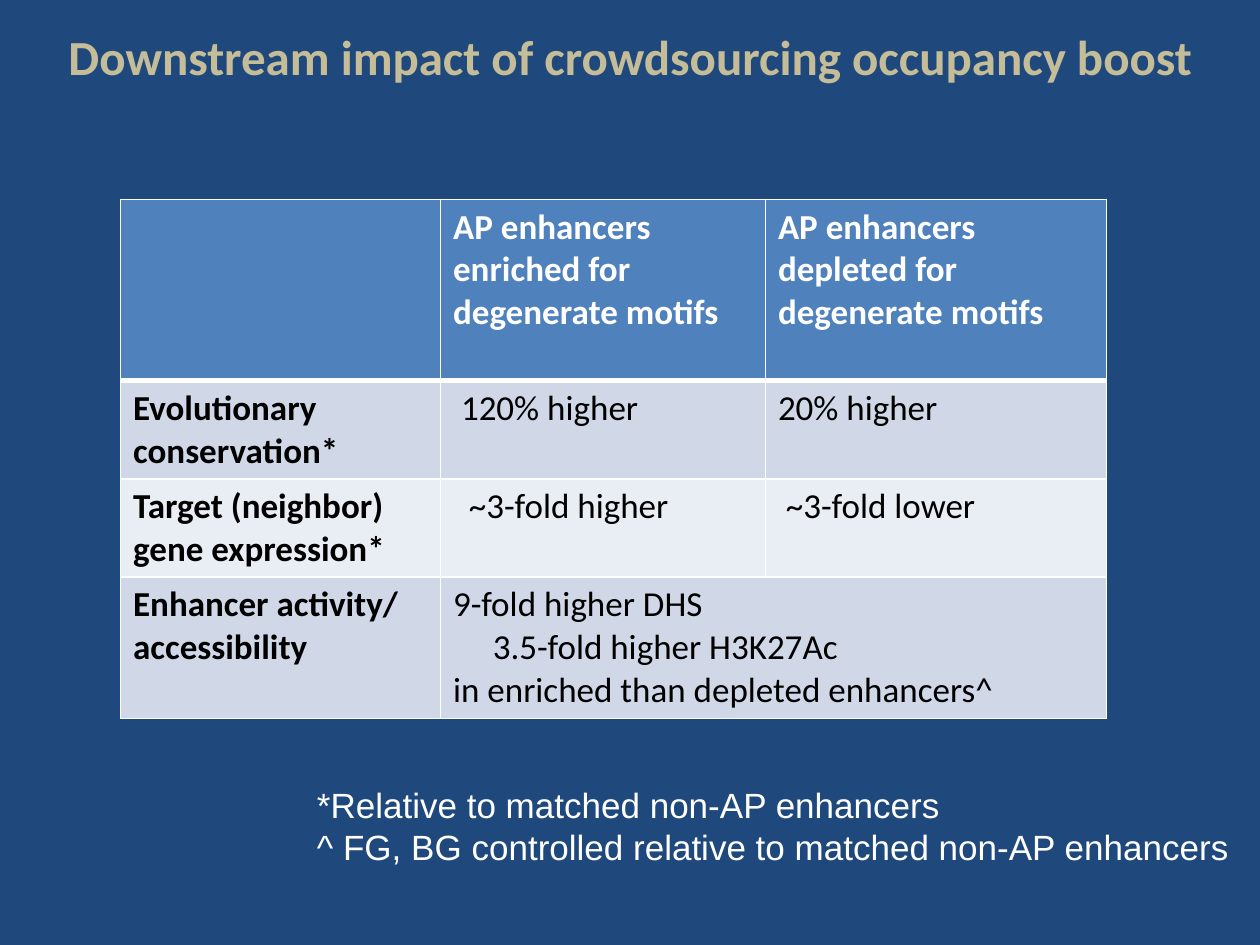
from dataclasses import dataclass

from lxml.etree import SubElement
from pptx import Presentation
from pptx.dml.color import RGBColor
from pptx.enum.text import MSO_ANCHOR, MSO_AUTO_SIZE, PP_ALIGN
from pptx.oxml.ns import qn
from pptx.util import Cm, Pt


@dataclass(frozen=True)
class Theme:
    background: str = "1F497D"
    title: str = "C4BD97"
    light: str = "FFFFFF"
    dark: str = "000000"
    header: str = "4F81BD"
    bands: tuple = ("D0D8E8", "E9EDF4")
    heading_font: str = "Calibri"
    note_font: str = "Arial"
    title_size: int = 28
    body_size: int = 20
    grid_line: int = 1
    header_line: int = 3


THEME = Theme()
SPACE = Cm(0.16)

# Each cell lists its paragraphs as (text, indent in spaces).
ROWS = [
    [[],
     [("AP enhancers enriched for degenerate motifs", 0)],
     [("AP enhancers depleted for degenerate motifs", 0)]],
    [[("Evolutionary conservation*", 0)],
     [("120% higher", 1)],
     [("20% higher", 0)]],
    [[("Target (neighbor) gene expression*", 0)],
     [("~3-fold higher", 2)],
     [("~3-fold lower", 1)]],
    [[("Enhancer activity/ accessibility", 0)],
     [("9-fold higher DHS", 0),
      ("3.5-fold higher H3K27Ac", 5),
      ("in enriched than depleted enhancers^", 0)],
     []],
]
COLUMN_WIDTHS = [Cm(6.45), Cm(6.55), Cm(6.88)]
ROW_HEIGHTS = [Cm(3.65), Cm(1.95), Cm(1.95), Cm(2.8)]
NOTES = [
    "*Relative to matched non-AP enhancers",
    "^ FG, BG controlled relative to matched non-AP enhancers",
]


def add_run(paragraph, text, font, size, color, bold=False):
    run = paragraph.add_run()
    run.text = text
    run.font.name = font
    run.font.size = Pt(size)
    run.font.bold = bold
    run.font.color.rgb = RGBColor.from_string(color)


def next_paragraph(text_frame, index):
    return text_frame.add_paragraph() if index else text_frame.paragraphs[0]


def set_borders(cell, top, bottom):
    """Draw all four edges of a cell; top and bottom are widths in points."""
    properties = cell._tc.get_or_add_tcPr()
    widths = {"a:lnL": THEME.grid_line, "a:lnR": THEME.grid_line,
              "a:lnT": top, "a:lnB": bottom}
    for position, (tag, width) in enumerate(widths.items()):
        line = SubElement(properties, qn(tag), w=str(Pt(width)))
        fill = SubElement(line, qn("a:solidFill"))
        SubElement(fill, qn("a:srgbClr"), val=THEME.light)
        properties.insert(position, line)


def format_cell(cell, paragraphs, row, column):
    is_header = row == 0
    color = THEME.header if is_header else THEME.bands[(row - 1) % 2]
    cell.fill.solid()
    cell.fill.fore_color.rgb = RGBColor.from_string(color)
    set_borders(
        cell,
        top=THEME.header_line if row == 1 else THEME.grid_line,
        bottom=THEME.header_line if is_header else THEME.grid_line,
    )
    for index, (text, indent) in enumerate(paragraphs):
        paragraph = next_paragraph(cell.text_frame, index)
        if indent:
            paragraph._p.get_or_add_pPr().set("marL", str(indent * SPACE))
        add_run(paragraph, text, THEME.heading_font, THEME.body_size,
                THEME.light if is_header else THEME.dark,
                bold=is_header or column == 0)


def place_title(slide, left, top, width, height):
    title = slide.shapes.title
    title.left, title.top, title.width, title.height = left, top, width, height
    frame = title.text_frame
    frame.auto_size = MSO_AUTO_SIZE.NONE
    frame.vertical_anchor = MSO_ANCHOR.MIDDLE
    paragraph = frame.paragraphs[0]
    paragraph.alignment = PP_ALIGN.CENTER
    add_run(paragraph, "Downstream impact of crowdsourcing occupancy boost",
            THEME.heading_font, THEME.title_size, THEME.title, bold=True)


def add_comparison_table(slide, left, top):
    table = slide.shapes.add_table(
        len(ROWS), len(COLUMN_WIDTHS), left, top,
        sum(COLUMN_WIDTHS), sum(ROW_HEIGHTS)).table
    for column, width in zip(table.columns, COLUMN_WIDTHS):
        column.width = width
    for row, height in zip(table.rows, ROW_HEIGHTS):
        row.height = height
    for row, cells in enumerate(ROWS):
        for column, paragraphs in enumerate(cells):
            format_cell(table.cell(row, column), paragraphs, row, column)
    last = len(ROWS) - 1
    table.cell(last, 1).merge(table.cell(last, 2))


def add_notes(slide, left, top, width, height):
    frame = slide.shapes.add_textbox(left, top, width, height).text_frame
    frame.word_wrap = False
    for index, note in enumerate(NOTES):
        add_run(next_paragraph(frame, index), note, THEME.note_font,
                THEME.body_size, THEME.light)


def main():
    presentation = Presentation()
    presentation.slide_width, presentation.slide_height = Cm(25.4), Cm(19.05)
    slide = presentation.slides.add_slide(
        presentation.slide_layouts.get_by_name("Title Only"))
    slide.background.fill.solid()
    slide.background.fill.fore_color.rgb = RGBColor.from_string(THEME.background)
    place_title(slide, 0, Cm(0.4), presentation.slide_width, Cm(1.45))
    add_comparison_table(slide, Cm(2.43), Cm(4.02))
    add_notes(slide, Cm(6.14), Cm(15.67), Cm(19.02), Cm(1.96))
    presentation.save("out.pptx")


if __name__ == "__main__":
    main()
